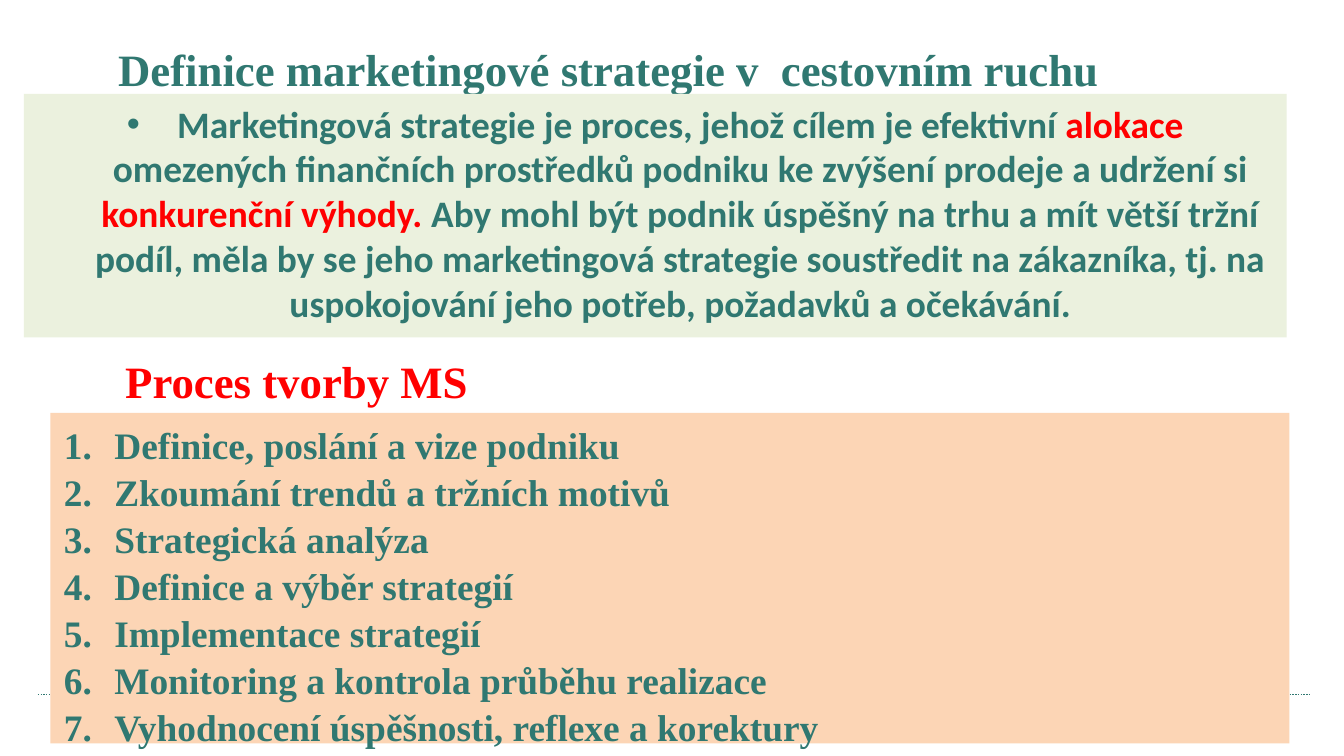
from lxml import etree
from pptx import Presentation
from pptx.dml.color import RGBColor
from pptx.enum.dml import MSO_LINE
from pptx.enum.shapes import MSO_CONNECTOR
from pptx.enum.text import MSO_ANCHOR, MSO_AUTO_SIZE, PP_ALIGN
from pptx.oxml.ns import qn
from pptx.util import Pt

PX = 9525
TEAL = RGBColor(0x30, 0x78, 0x71)
RED = RGBColor(0xFF, 0x00, 0x00)
GREEN = RGBColor(0xEB, 0xF1, 0xDE)
PEACH = RGBColor(0xFC, 0xD5, 0xB5)
SERIF, SANS = "Times New Roman", "Calibri"
LEFT, CENTER = PP_ALIGN.LEFT, PP_ALIGN.CENTER
TOP, NONE = MSO_ANCHOR.TOP, MSO_AUTO_SIZE.NONE
STRAIGHT, DOTS = MSO_CONNECTOR.STRAIGHT, MSO_LINE.ROUND_DOT


def place(shape, box, inset=5):
    for name, px in zip(("left", "top", "width", "height"), box):
        setattr(shape, name, px * PX)
    frame = shape.text_frame
    look = {"word_wrap": True, "auto_size": NONE, "vertical_anchor": TOP,
            "margin_top": inset * PX, "margin_bottom": 0}
    for name, value in look.items():
        setattr(frame, name, value)
    return frame


def write(para, runs, face, size, align, pitch):
    para.alignment = align
    para.space_before = Pt(0)
    para.line_spacing = pitch
    for text, color in runs:
        run = para.add_run()
        run.text = text
        look = {"name": face, "size": Pt(size), "bold": True}
        for name, value in look.items():
            setattr(run.font, name, value)
        run.font.color.rgb = color


prs = Presentation()
prs.slide_width, prs.slide_height = 960 * PX, 540 * PX
slide = prs.slides.add_slide(prs.slide_layouts[3])
shapes = slide.shapes
title, intro, steps = slide.placeholders

rule = shapes.add_connector(STRAIGHT, 27 * PX, 496 * PX, 936 * PX, 496 * PX)
rule.line.color.rgb = TEAL
rule.line.width = Pt(0.75)
rule.line.dash_style = DOTS
etree.SubElement(rule._element.spPr, qn("a:effectLst"))
shapes._spTree.insert(2, rule._element)

frame = place(title, (19, 20, 831, 42), 8)
write(frame.paragraphs[0], [("Definice marketingové strategie v  cestovním ruchu", TEAL)],
      SERIF, 24, CENTER, 1.05)

intro.fill.solid()
intro.fill.fore_color.rgb = GREEN
frame = place(intro, (17, 67, 902, 174))
parts = [
    ("Marketingová strategie je proces, jehož cílem je efektivní ", TEAL),
    ("alokace", RED),
    (" omezených finančních prostředků podniku ke zvýšení prodeje a udržení si ", TEAL),
    ("konkurenční výhody. ", RED),
    ("Aby mohl být podnik úspěšný na trhu a mít větší tržní podíl, měla by se jeho "
     "marketingová strategie soustředit na zákazníka, tj. na uspokojování jeho potřeb, "
     "požadavků a očekávání.", TEAL),
]
write(frame.paragraphs[0], parts, SANS, 20, CENTER, 1.0)

steps.fill.solid()
steps.fill.fore_color.rgb = PEACH
frame = place(steps, (36, 295, 885, 236))
items = [
    "Definice, poslání a vize podniku",
    "Zkoumání trendů a tržních motivů",
    "Strategická analýza",
    "Definice a výběr strategií",
    "Implementace strategií",
    "Monitoring a kontrola průběhu realizace",
    "Vyhodnocení úspěšnosti, reflexe a korektury",
]
for i, item in enumerate(items):
    para = frame.add_paragraph() if i else frame.paragraphs[0]
    props = para._p.get_or_add_pPr()
    etree.SubElement(props, qn("a:buFont"), typeface=SERIF)
    etree.SubElement(props, qn("a:buAutoNum"), type="arabicPeriod")
    write(para, [(item, TEAL)], SERIF, 20, LEFT, 1.05)

label = shapes.add_textbox(0, 0, PX, PX)
frame = place(label, (80, 246, 310, 48))
write(frame.paragraphs[0], [("Proces tvorby MS", RED)], SERIF, 24, LEFT, 1.05)

prs.save("out.pptx")
